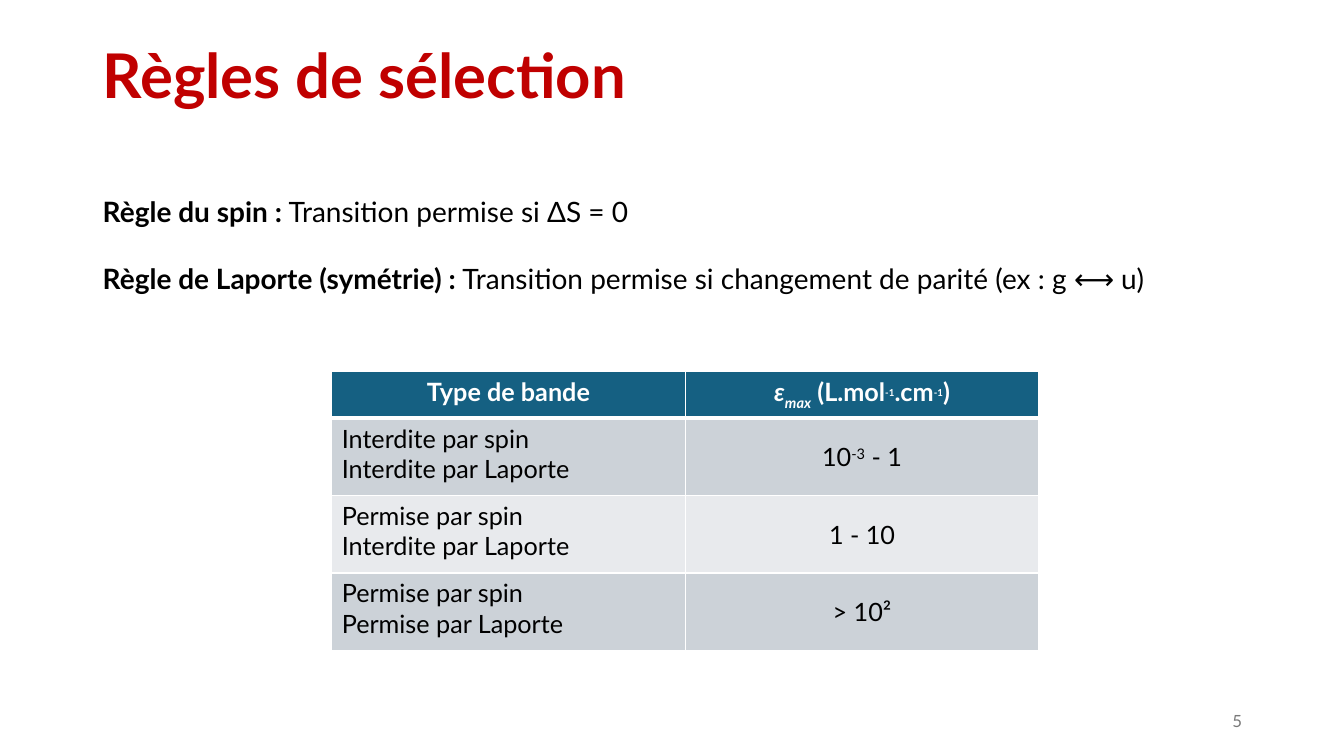
from lxml.etree import SubElement
from pptx import Presentation
from pptx.dml.color import RGBColor
from pptx.enum.text import MSO_ANCHOR as Anchor, PP_ALIGN as Align
from pptx.oxml.ns import qn
from pptx.util import Cm, Pt

FONT = "Lato"
BLACK, WHITE, RED, GREY = "000000", "FFFFFF", "C00000", "797979"
HEADER_FILL, ROW_FILLS = "156082", ("CCD2D8", "E8EAED")
BOLD, ITALIC = {"bold": True}, {"italic": True}
SUPERSCRIPT, SUBSCRIPT = {"baseline": 30}, {"baseline": -25}
SMALL_SUPERSCRIPT = {**SUPERSCRIPT, "size": 12}

RULES = [
    [("Règle du spin :", BOLD), (" Transition permise si ΔS = 0", {})],
    [("Règle de Laporte (symétrie) :", BOLD),
     (" Transition permise si changement de parité (ex : g ⟷ u)", {})],
]
HEADERS = [
    [("Type de bande", {})],
    [("ε", ITALIC), ("max", {**ITALIC, **SUBSCRIPT}), (" (L.mol", {}),
     ("-1", SMALL_SUPERSCRIPT), (".cm", {}), ("-1", SMALL_SUPERSCRIPT), (")", {})],
]
BANDS = [
    (("Interdite par spin", "Interdite par Laporte"),
     [("10", {}), ("-3", SUPERSCRIPT), (" - 1", {})]),
    (("Permise par spin", "Interdite par Laporte"), [("1 - 10", {})]),
    (("Permise par spin", "Permise par Laporte"), [("> 10²", {})]),
]


def color(hex_code):
    return RGBColor.from_string(hex_code)


def add_span(para, text, size, ink, baseline=0, **style):
    span = para.add_run()
    span.text = text
    font_format = {"name": FONT, "size": Pt(size), "bold": False, **style}
    for name, value in font_format.items():
        setattr(span.font, name, value)
    span.font.color.rgb = color(ink)
    if baseline:
        span.font._element.set("baseline", str(baseline * 1000))


def write(frame, lines, base, **para_format):
    """Write lines of (text, format) spans; each format overrides base."""
    for index, spans in enumerate(lines):
        para = frame.paragraphs[0] if index == 0 else frame.add_paragraph()
        for name, value in para_format.items():
            setattr(para, name, value)
        if index == 0:
            para.space_before = Pt(0)
        for text, style in spans:
            add_span(para, text, **{**base, **style})


def add_text(page, place, lines, base, anchor=Anchor.TOP, **para_format):
    box = page.shapes.add_textbox(*map(Cm, place))
    box.text_frame.word_wrap = True
    box.text_frame.vertical_anchor = anchor
    write(box.text_frame, lines, base, **para_format)


def set_borders(cell, **widths):
    """Draw white borders, 1 pt wide unless a side (L, R, T, B) is given."""
    properties = cell._tc.get_or_add_tcPr()
    for side in "LRTB":
        line = SubElement(properties, qn(f"a:ln{side}"), w=str(Pt(widths.get(side, 1))))
        SubElement(SubElement(line, qn("a:solidFill")), qn("a:srgbClr"), val=WHITE)


def fill_cell(cell, lines, base, fill, anchor, align, **borders):
    set_borders(cell, **borders)
    cell.fill.solid()
    cell.fill.fore_color.rgb = color(fill)
    cell.vertical_anchor = anchor
    write(cell.text_frame, lines, base, alignment=align)


def add_band_table(page):
    header_height, row_height, column_width = 1.17, 1.95, 8.91
    place = (8.36, 9.37, 2 * column_width, header_height + len(BANDS) * row_height)
    table = page.shapes.add_table(len(BANDS) + 1, 2, *map(Cm, place)).table
    for column in table.columns:
        column.width = Cm(column_width)
    for index, row in enumerate(table.rows):
        row.height = Cm(row_height if index else header_height)

    header = {"size": 18, "ink": WHITE, "bold": True}
    for column, spans in enumerate(HEADERS):
        fill_cell(table.cell(0, column), [spans], header, HEADER_FILL,
                  Anchor.TOP, Align.CENTER, B=3)
    body = {"size": 18, "ink": BLACK}
    for row, (kinds, value) in enumerate(BANDS, start=1):
        fill = ROW_FILLS[(row - 1) % 2]
        top = 3 if row == 1 else 1
        fill_cell(table.cell(row, 0), [[(kind, {})] for kind in kinds], body, fill,
                  Anchor.TOP, Align.LEFT, T=top)
        fill_cell(table.cell(row, 1), [value], body, fill,
                  Anchor.MIDDLE, Align.CENTER, T=top)


def main():
    deck = Presentation()
    deck.slide_width, deck.slide_height = Cm(33.87), Cm(19.05)
    page = deck.slides.add_slide(deck.slide_layouts[6])
    add_text(page, (23.93, 17.65, 7.62, 1.02), [[("5", {})]],
             {"size": 12, "ink": GREY}, Anchor.MIDDLE, alignment=Align.RIGHT)
    add_text(page, (2.34, 1.02, 29.21, 3.68), [[("Règles de sélection", BOLD)]],
             {"size": 44, "ink": RED}, line_spacing=0.9)
    add_text(page, (2.34, 4.78, 29.85, 2.82), RULES,
             {"size": 20, "ink": BLACK}, space_before=Pt(24))
    add_band_table(page)
    deck.save("out.pptx")


if __name__ == "__main__":
    main()
